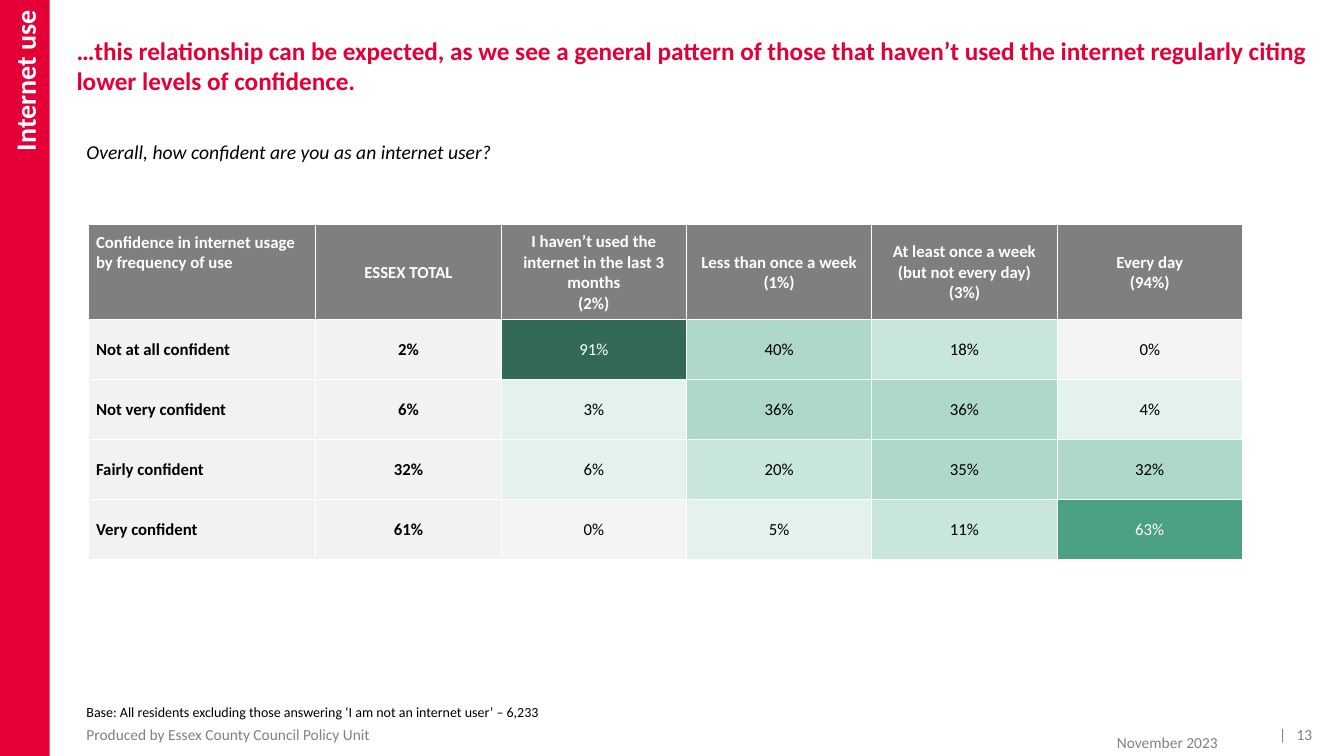
from lxml.etree import SubElement
from pptx import Presentation
from pptx.dml.color import RGBColor
from pptx.enum.shapes import MSO_SHAPE
from pptx.enum.text import MSO_ANCHOR, MSO_AUTO_SIZE, PP_ALIGN
from pptx.oxml.ns import qn
from pptx.util import Cm, Pt

RED = RGBColor(0xE4, 0x00, 0x37)
WHITE = RGBColor(0xFF, 0xFF, 0xFF)
BLACK = RGBColor(0x00, 0x00, 0x00)
FOOTER_GREY = RGBColor(0x80, 0x80, 0x80)
HEADER_GREY = RGBColor(0x7F, 0x7F, 0x7F)
TOTAL_GREY = RGBColor(0xF2, 0xF2, 0xF2)

# Highest percentage in each band, fill, text colour
HEAT_BANDS = [
    (0, RGBColor(0xF4, 0xF4, 0xF3), BLACK),
    (10, RGBColor(0xE4, 0xF2, 0xED), BLACK),
    (30, RGBColor(0xC9, 0xE6, 0xDB), BLACK),
    (50, RGBColor(0xAE, 0xD9, 0xCA), BLACK),
    (75, RGBColor(0x4A, 0xA0, 0x81), WHITE),
    (100, RGBColor(0x32, 0x6A, 0x56), WHITE),
]

FONT = "Calibri"
SECTION = "Internet use"
TITLE = (
    "…this relationship can be expected, as we see a general pattern of those "
    "that haven’t used the internet regularly citing lower levels of confidence."
)
HEADERS = [
    "Confidence in internet usage by frequency of use",
    "ESSEX TOTAL",
    "I haven’t used the internet in the last 3 months\n(2%)",
    "Less than once a week\n(1%)",
    "At least once a week (but not every day)\n(3%)",
    "Every day\n(94%)",
]
# Answer, then total and the four frequency groups, in percent
ANSWERS = [
    ("Not at all confident", 2, 91, 40, 18, 0),
    ("Not very confident", 6, 3, 36, 36, 4),
    ("Fairly confident", 32, 6, 20, 35, 32),
    ("Very confident", 61, 0, 5, 11, 63),
]
LABEL_WIDTH, VALUE_WIDTH = Cm(5.74), Cm(4.67)
HEADER_HEIGHT, ANSWER_HEIGHT = Cm(2.39), Cm(1.51)

# Text, box (left, top, width, height), left and right inset, size, colour, italic, alignment
SMALL_TEXTS = [
    ("Overall, how confident are you as an internet user?",
     (1.93, 3.38, 16.87, 0.86), (0.25, 0.25), 14, BLACK, True, PP_ALIGN.LEFT),
    ("Base: All residents excluding those answering ‘I am not an internet user’ – 6,233",
     (1.93, 17.6, 15.57, 0.69), (0.25, 0.25), 10, BLACK, False, PP_ALIGN.LEFT),
    ("Produced by Essex County Council Policy Unit",
     (1.93, 18.31, 16.61, 0.38), (0.25, 0.25), 11, FOOTER_GREY, False, PP_ALIGN.LEFT),
    ("November 2023",
     (24.59, 18.52, 6.1, 0.38), (0.25, 0), 11, FOOTER_GREY, False, PP_ALIGN.RIGHT),
    ("|   13",
     (30.91, 18.31, 2.16, 0.38), (0.25, 0), 11, FOOTER_GREY, False, PP_ALIGN.RIGHT),
]


def set_insets(frame, left, top, right, bottom):
    frame.margin_left, frame.margin_top = Cm(left), Cm(top)
    frame.margin_right, frame.margin_bottom = Cm(right), Cm(bottom)


def format_text(frame, size, color, bold=False, italic=False, alignment=PP_ALIGN.LEFT):
    for paragraph in frame.paragraphs:
        paragraph.alignment = alignment
        font = paragraph.font
        font.name, font.size = FONT, Pt(size)
        font.bold, font.italic = bold, italic
        font.color.rgb = color


def add_borders(cell):
    """Draw a white line on all four sides; must run before the cell is filled."""
    properties = cell._tc.get_or_add_tcPr()
    for side in ("a:lnL", "a:lnR", "a:lnT", "a:lnB"):
        line = SubElement(properties, qn(side), w=str(Pt(1)))
        fill = SubElement(line, qn("a:solidFill"))
        SubElement(fill, qn("a:srgbClr"), val=str(WHITE))


def cell_colors(row, column, value):
    """Return the fill and the text colour of a cell."""
    if row == 0:
        return HEADER_GREY, WHITE
    if column < 2:
        return TOTAL_GREY, BLACK
    return next((fill, text) for limit, fill, text in HEAT_BANDS if value <= limit)


def add_confidence_table(slide):
    rows = [HEADERS, *ANSWERS]
    width = LABEL_WIDTH + VALUE_WIDTH * (len(HEADERS) - 1)
    height = HEADER_HEIGHT + ANSWER_HEIGHT * len(ANSWERS)
    table = slide.shapes.add_table(
        len(rows), len(HEADERS), Cm(2.22), Cm(5.66), width, height).table
    for index, column in enumerate(table.columns):
        column.width = VALUE_WIDTH if index else LABEL_WIDTH
    for index, row in enumerate(table.rows):
        row.height = ANSWER_HEIGHT if index else HEADER_HEIGHT

    for row, values in enumerate(rows):
        for column, value in enumerate(values):
            cell = table.cell(row, column)
            cell.text = value if isinstance(value, str) else f"{value}%"
            fill, color = cell_colors(row, column, value)
            add_borders(cell)
            cell.fill.solid()
            cell.fill.fore_color.rgb = fill
            corner = row == column == 0
            cell.vertical_anchor = MSO_ANCHOR.TOP if corner else MSO_ANCHOR.MIDDLE
            side = 0.2 if row == 0 or column == 0 else 0.03
            set_insets(cell, side, 0.2 if corner else 0.03, side, 0)
            format_text(cell.text_frame, 12, color, bold=row == 0 or column < 2,
                        alignment=PP_ALIGN.CENTER if column else PP_ALIGN.LEFT)


def add_section_bar(slide, height):
    bar = slide.shapes.add_shape(MSO_SHAPE.RECTANGLE, 0, 0, Cm(1.25), height)
    bar.shadow.inherit = False
    bar.fill.solid()
    bar.fill.fore_color.rgb = RED
    bar.line.fill.background()
    frame = bar.text_frame
    frame.text = SECTION
    frame.vertical_anchor = MSO_ANCHOR.MIDDLE
    frame._txBody.bodyPr.set("vert", "vert270")
    set_insets(frame, 0.25, 0.25, 0.25, 0.13)
    format_text(frame, 20, WHITE, bold=True, alignment=PP_ALIGN.RIGHT)


def add_title(slide):
    title = slide.shapes.title
    title.left, title.top, title.width, title.height = Cm(1.93), Cm(0.89), Cm(31.34), Cm(2.74)
    frame = title.text_frame
    frame.text = TITLE
    frame.word_wrap = True
    frame.auto_size = MSO_AUTO_SIZE.NONE
    frame.vertical_anchor = MSO_ANCHOR.TOP
    set_insets(frame, 0, 0, 0, 0)
    format_text(frame, 18, RED, bold=True)


def add_small_texts(slide):
    for text, box, (left, right), size, color, italic, alignment in SMALL_TEXTS:
        frame = slide.shapes.add_textbox(*map(Cm, box)).text_frame
        frame.text = text
        frame.word_wrap = True
        frame.vertical_anchor = MSO_ANCHOR.MIDDLE
        set_insets(frame, left, 0.13, right, 0.13)
        format_text(frame, size, color, italic=italic, alignment=alignment)


def main():
    presentation = Presentation()
    presentation.slide_width, presentation.slide_height = Cm(33.87), Cm(19.05)
    slide = presentation.slides.add_slide(presentation.slide_layouts[5])
    add_title(slide)
    add_section_bar(slide, presentation.slide_height)
    add_small_texts(slide)
    add_confidence_table(slide)
    presentation.save("out.pptx")


if __name__ == "__main__":
    main()
